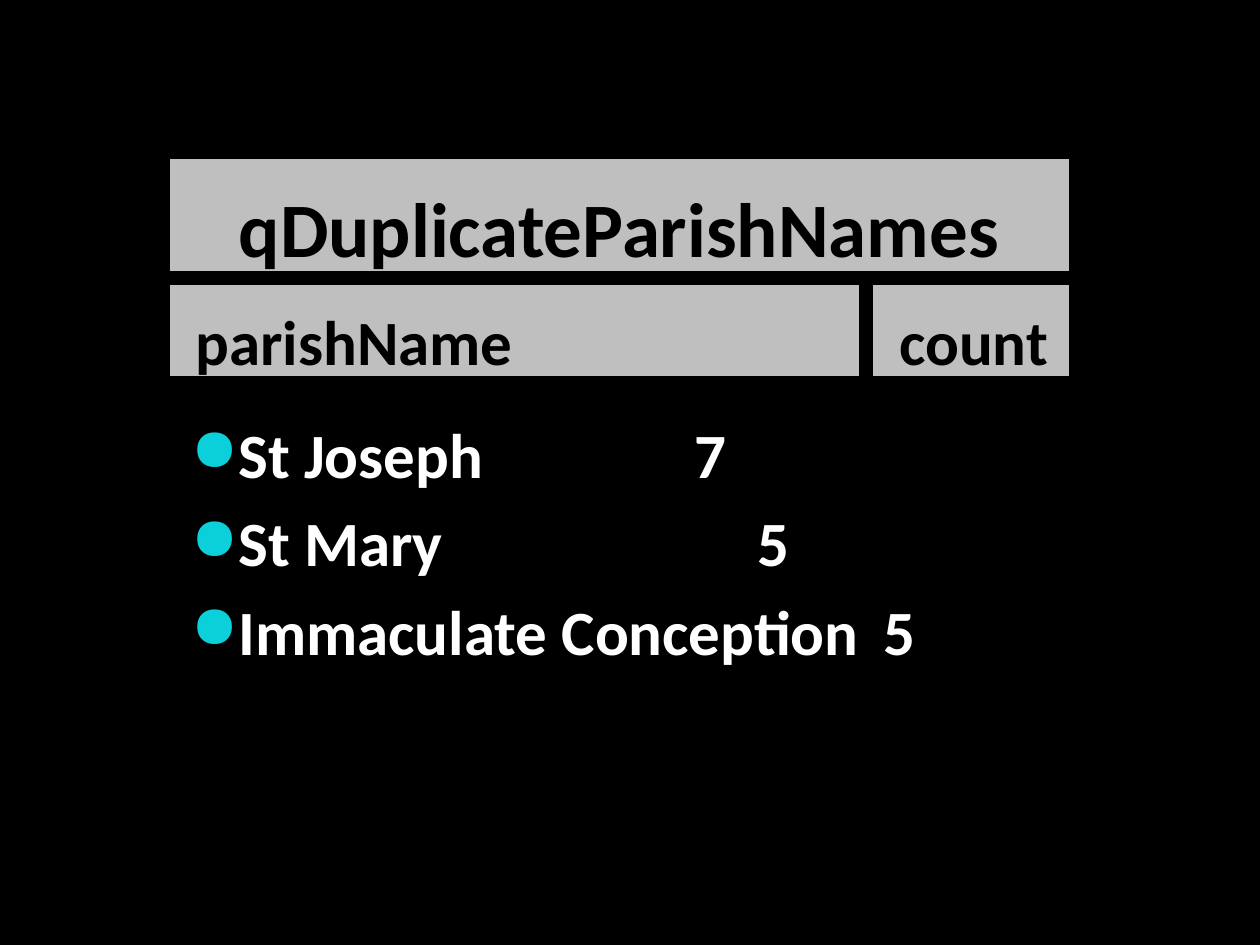
import dataclasses

import lxml.etree
import pptx
import pptx.dml.color
import pptx.enum.shapes
import pptx.enum.text
import pptx.oxml.ns
import pptx.util

COLORS = {"back": "000000", "bar": "BFBFBF", "dark": "000000",
          "light": "FFFFFF", "bullet": "0BD0D9"}
UNIT = pptx.util.Inches(1) // 12  # grid of 12 columns and rows to the inch
ALIGN = pptx.enum.text.PP_ALIGN
ANCHOR = pptx.enum.text.MSO_ANCHOR


@dataclasses.dataclass
class Bar:
    text: str
    col: int
    row: int
    cols: int
    rows: int
    size: int = 36
    align: ALIGN = ALIGN.LEFT
    indent: float = 0.22


BARS = [
    Bar("qDuplicateParishNames", 16, 15, 86, 11, 44, ALIGN.CENTER, 0),
    Bar("parishName", 16, 27, 66, 9),
    Bar("count", 83, 27, 19, 9),
]
# Default tab stops, one inch apart, bring each count to the same column
PARISHES = ["St Joseph\t\t\t\t7", "St Mary\t\t\t\t\t5", "Immaculate Conception\t5"]


def rgb(name: str) -> pptx.dml.color.RGBColor:
    return pptx.dml.color.RGBColor.from_string(COLORS[name])


def set_all(obj, values: dict) -> None:
    for name, value in values.items():
        setattr(obj, name, value)


def add_run(p, text: str, size: int, color: str) -> None:
    r = p.add_run()
    r.text = text
    set_all(r.font, {"name": "Calibri", "size": pptx.util.Pt(size), "bold": True})
    r.font.color.rgb = rgb(color)


def add_bar(s, bar: Bar) -> None:
    box = [n * UNIT for n in (bar.col, bar.row, bar.cols, bar.rows)]
    sp = s.shapes.add_shape(pptx.enum.shapes.MSO_SHAPE.RECTANGLE, *box)
    sp.shadow.inherit = False
    sp.fill.solid()
    sp.fill.fore_color.rgb = rgb("bar")
    sp.line.color.rgb = rgb("dark")
    sp.line.width = pptx.util.Pt(2)
    tf = sp.text_frame
    set_all(tf, {"word_wrap": True, "vertical_anchor": ANCHOR.BOTTOM,
                 "margin_left": pptx.util.Inches(bar.indent),
                 "margin_top": pptx.util.Inches(0.05),
                 "margin_right": 0, "margin_bottom": 0})
    p = tf.paragraphs[0]
    p.alignment = bar.align
    add_run(p, bar.text, bar.size, "dark")


def add_bullet(p) -> None:
    """Give a paragraph a hanging round bullet and space above."""
    def child(parent, tag: str, **attrs: str):
        return lxml.etree.SubElement(parent, pptx.oxml.ns.qn(tag), attrs)

    pPr = p._p.get_or_add_pPr()
    hang = pptx.util.Inches(0.3)
    pPr.set("marL", str(hang))
    pPr.set("indent", str(-hang))
    child(child(pPr, "a:spcBef"), "a:spcPct", val="20000")
    child(child(pPr, "a:buClr"), "a:srgbClr", val=COLORS["bullet"])
    child(pPr, "a:buSzPct", val="95000")
    child(pPr, "a:buChar", char="●")


def add_list(s, rows: list[str]) -> None:
    sp = s.shapes.add_textbox(*[n * UNIT for n in (17, 39, 90, 37)])
    tf = sp.text_frame
    tf.word_wrap = True
    for i, text in enumerate(rows):
        p = tf.add_paragraph() if i else tf.paragraphs[0]
        add_bullet(p)
        add_run(p, text, 36, "light")


def main() -> None:
    prs = pptx.Presentation()
    set_all(prs, {"slide_width": 120 * UNIT, "slide_height": 90 * UNIT})
    s = prs.slides.add_slide(prs.slide_layouts[6])
    s.background.fill.solid()
    s.background.fill.fore_color.rgb = rgb("back")

    # Title and column heads
    for bar in BARS:
        add_bar(s, bar)

    # Parish names with their counts
    add_list(s, PARISHES)
    prs.save("out.pptx")


if __name__ == "__main__":
    main()
